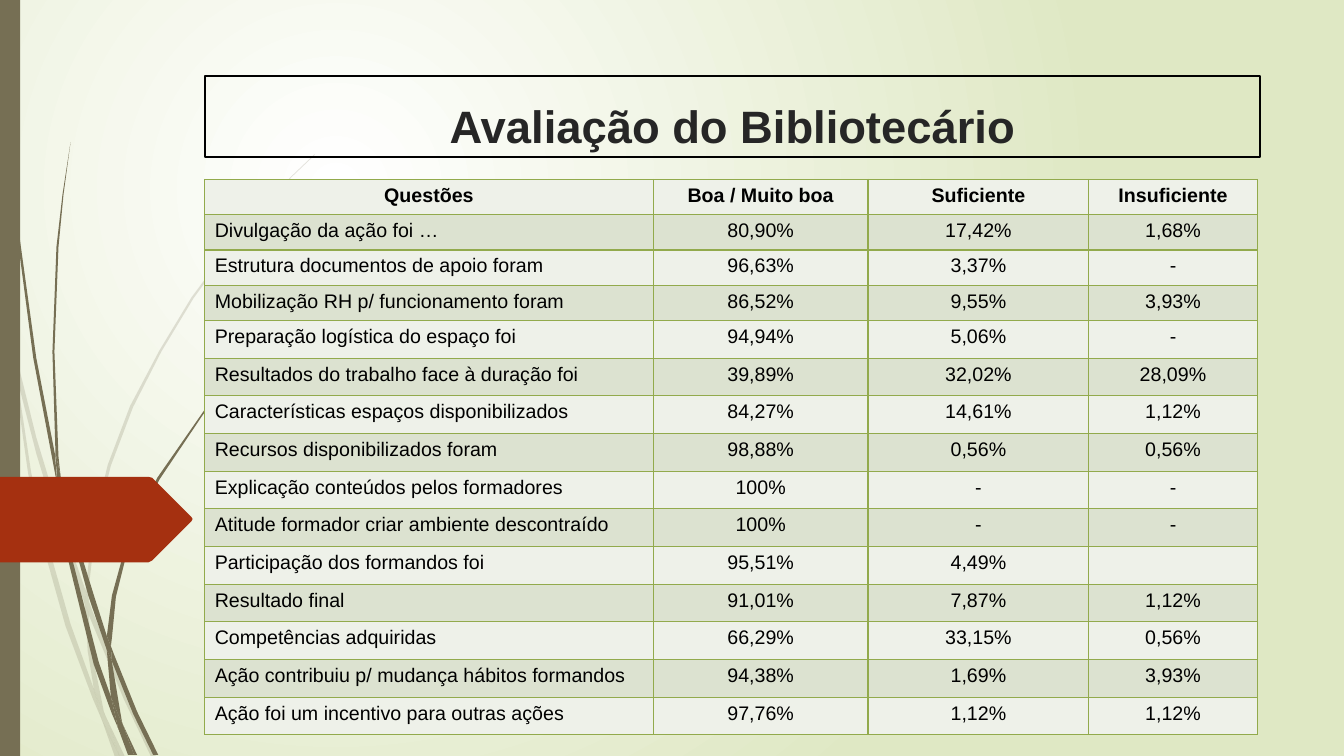
from lxml import etree
from pptx import Presentation
from pptx.dml.color import RGBColor
from pptx.enum import shapes, text
from pptx.oxml.ns import qn
from pptx.util import Inches, Pt

WHITE = RGBColor(0xFF, 0xFF, 0xFF)
BLACK = RGBColor(0x00, 0x00, 0x00)
PALE_GREEN = RGBColor(0xDF, 0xE8, 0xC4)
BROWN = RGBColor(0x76, 0x6F, 0x54)
RUST = RGBColor(0xA5, 0x30, 0x10)
TITLE_GREY = RGBColor(0x26, 0x26, 0x26)
ROW_FILLS = RGBColor(0xEE, 0xF1, 0xE9), RGBColor(0xDC, 0xE2, 0xD0)
BORDER = RGBColor(0x92, 0xAA, 0x4C)
FONT = "Arial"

# Outlines of the pieces of the grass blades
FAINT_GRASS = [
    [(0.11, 3.5), (0.09, 3.22), (0, 2.82), (0, 2.99), (0.1, 3.44)],
    [(0.58, 5.22), (0.84, 5.99), (0.85, 5.86), (0.62, 5.2), (0.36, 4.34), (0.14, 3.45),
     (0.17, 3.76), (0.36, 4.5)],
    [(0.92, 6.07), (0.88, 5.96), (0.88, 6.1), (1.23, 6.94), (1.5, 7.51), (1.55, 7.51),
     (1.27, 6.92)],
    [(1.19, 7.51), (1.24, 7.51), (1.05, 7.11)],
    [(0.93, 6.83), (0.7, 6.19), (0.49, 5.45), (0.31, 4.69), (0.17, 3.76), (0.11, 3.5),
     (0.28, 4.7), (0.44, 5.46), (0.65, 6.21), (0.92, 6.93), (1.01, 7.14), (0.99, 7.07)],
    [(0.84, 5.99), (0.87, 6.46), (0.93, 6.83), (0.96, 6.92), (1.05, 7.11), (1.03, 7.06),
     (0.91, 6.46), (0.88, 6.1), (0.88, 6.08)],
    [(0.88, 5.84), (0.95, 5.22), (1.1, 4.62), (1.32, 4.04), (1.6, 3.49), (1.92, 2.96),
     (2.29, 2.45), (2.68, 1.98), (2.9, 1.75), (3.12, 1.54), (3.12, 1.53), (2.89, 1.75),
     (2.68, 1.97), (2.28, 2.44), (1.9, 2.95), (1.58, 3.48), (1.29, 4.03), (1.07, 4.61),
     (0.92, 5.22), (0.85, 5.84), (0.85, 5.86), (0.88, 5.96)],
    [(1.01, 7.14), (1.14, 7.51), (1.19, 7.51)],
    [(0.88, 6.08), (0.88, 6.1), (0.88, 5.96), (0.85, 5.86), (0.84, 5.99)],
    [(0.96, 6.92), (0.93, 6.83), (0.99, 7.07), (1.01, 7.14), (1.19, 7.51), (1.05, 7.11)],
]
DARK_GRASS = [
    [(0.07, 1.1), (0.17, 2.33), (0.33, 3.55), (0.56, 4.77), (0.57, 4.81), (0.55, 4.57),
     (0.55, 4.53), (0.36, 3.55), (0.19, 2.32), (0.08, 1.09), (0.05, 0.48), (0.04, 0),
     (0.03, 0), (0.04, 0.48)],
    [(0.88, 5.92), (1.06, 6.45), (1.06, 6.33), (1.06, 6.31), (0.93, 5.9), (0.75, 5.32),
     (0.6, 4.72), (0.64, 5.05)],
    [(1.13, 6.49), (1.1, 6.41), (1.11, 6.56), (1.32, 7.08), (1.52, 7.49), (1.57, 7.49),
     (1.36, 7.06)],
    [(1.1, 6.91), (0.98, 6.57), (0.72, 5.56), (0.64, 5.05), (0.57, 4.77), (0.68, 5.57),
     (0.93, 6.59), (1.11, 7.08), (1.17, 7.22), (1.16, 7.17)],
    [(0.6, 4.72), (0.58, 4.53), (0.54, 3.49), (0.58, 2.45), (0.63, 1.93), (0.7, 1.41),
     (0.62, 1.93), (0.56, 2.45), (0.52, 3.49), (0.55, 4.49)],
    [(1.33, 7.49), (1.36, 7.49), (1.22, 7.19)],
    [(0.57, 4.77), (0.64, 5.05), (0.6, 4.72), (0.55, 4.49), (0.55, 4.53)],
    [(1.11, 6.33), (1.15, 5.92), (1.25, 5.52), (1.4, 5.13), (1.58, 4.76), (2.05, 4.06),
     (2.31, 3.74), (2.45, 3.59), (2.61, 3.44), (2.6, 3.44), (2.45, 3.58), (2.31, 3.73),
     (2.04, 4.05), (1.56, 4.74), (1.37, 5.12), (1.22, 5.51), (1.11, 5.91), (1.06, 6.31),
     (1.1, 6.41)],
    [(1.17, 7.22), (1.27, 7.49), (1.31, 7.49)],
    [(1.06, 6.45), (1.1, 6.91), (1.16, 7.06), (1.22, 7.19), (1.21, 7.16), (1.11, 6.56),
     (1.09, 6.51)],
    [(1.06, 6.45), (1.09, 6.51), (1.11, 6.56), (1.1, 6.41), (1.06, 6.31), (1.06, 6.33)],
    [(1.16, 7.06), (1.1, 6.91), (1.16, 7.17), (1.17, 7.22), (1.3, 7.49), (1.33, 7.49),
     (1.22, 7.19)],
]
ARROW_OUTLINE = [(0, 4.73), (1.47, 4.73), (1.51, 4.74), (1.9, 5.13), (1.91, 5.15),
                 (1.9, 5.17), (1.51, 5.56), (1.47, 5.58), (0, 5.58)]

COLUMN_WIDTHS = 4.45, 2.13, 2.19, 1.67
TABLE_HEIGHT = 5.51
SHORT_ROWS, SHORT_HEIGHT = 4, 0.35
RATINGS = [
    ("Questões", "Boa / Muito boa", "Suficiente", "Insuficiente"),
    ("Divulgação da ação foi …", "80,90%", "17,42%", "1,68%"),
    ("Estrutura documentos de apoio foram", "96,63%", "3,37%", "-"),
    ("Mobilização RH p/ funcionamento foram", "86,52%", "9,55%", "3,93%"),
    ("Preparação logística do espaço foi", "94,94%", "5,06%", "-"),
    ("Resultados do trabalho face à duração foi", "39,89%", "32,02%", "28,09%"),
    ("Características espaços disponibilizados", "84,27%", "14,61%", "1,12%"),
    ("Recursos disponibilizados foram", "98,88%", "0,56%", "0,56%"),
    ("Explicação conteúdos pelos formadores", "100%", "-", "-"),
    ("Atitude formador criar ambiente descontraído", "100%", "-", "-"),
    ("Participação dos formandos foi", "95,51%", "4,49%", ""),
    ("Resultado final", "91,01%", "7,87%", "1,12%"),
    ("Competências adquiridas", "66,29%", "33,15%", "0,56%"),
    ("Ação contribuiu p/ mudança hábitos formandos", "94,38%", "1,69%", "3,93%"),
    ("Ação foi um incentivo para outras ações", "97,76%", "1,12%", "1,12%"),
]


def set_background(s):
    fill = s.background.fill
    fill.gradient()
    for stop, position, color in zip(fill.gradient_stops, (0, 1), (WHITE, PALE_GREEN)):
        stop.position = position
        stop.color.rgb = color
    # Turn the linear gradient into a circular one
    grad = next(s.element.iter(qn("a:gradFill")))
    grad.remove(grad.find(qn("a:lin")))
    circle = etree.SubElement(grad, qn("a:path"), path="circle")
    etree.SubElement(circle, qn("a:fillToRect"), l="50000", t="50000", r="100000", b="100000")


def paint(sp, color, opacity=100):
    sp.shadow.inherit = False
    sp.line.fill.background()
    sp.fill.solid()
    sp.fill.fore_color.rgb = color
    if opacity < 100:
        clr = next(sp.element.spPr.iter(qn("a:srgbClr")))
        etree.SubElement(clr, qn("a:alpha"), val=str(opacity * 1000))


def add_outline(s, points, color, opacity=100):
    points = [(Inches(x), Inches(y)) for x, y in points]
    builder = s.shapes.build_freeform(*points[0])
    builder.add_line_segments(points[1:])
    paint(builder.convert_to_shape(), color, opacity)


def format_font(font, size, color, bold):
    font.name = FONT
    font.size = Pt(size)
    font.bold = bold
    font.color.rgb = color


def add_title(s, title):
    sp = s.shapes.title
    s.shapes.element.append(sp.element)  # in front of the decoration
    sp.left, sp.top, sp.width, sp.height = map(Inches, (2.03, 0.75, 10.47, 0.81))
    sp.line.color.rgb = BLACK
    sp.line.width = Pt(1.5)
    tf = sp.text_frame
    tf.text = title
    tf.auto_size = text.MSO_AUTO_SIZE.NONE
    tf.vertical_anchor = text.MSO_ANCHOR.BOTTOM
    p = tf.paragraphs[0]
    p.alignment = text.PP_ALIGN.CENTER
    p.line_spacing = 1.5
    format_font(p.font, 32.4, TITLE_GREY, True)


def set_borders(cell):
    tc_pr = cell._tc.get_or_add_tcPr()
    for i, side in enumerate(("a:lnL", "a:lnR", "a:lnT", "a:lnB")):
        ln = etree.Element(qn(side), w=str(Pt(1)))
        solid = etree.SubElement(ln, qn("a:solidFill"))
        etree.SubElement(solid, qn("a:srgbClr"), val=str(BORDER))
        tc_pr.insert(i, ln)


def add_ratings_table(s):
    table = s.shapes.add_table(
        len(RATINGS), len(COLUMN_WIDTHS), Inches(2.03), Inches(1.78),
        Inches(sum(COLUMN_WIDTHS)), Inches(TABLE_HEIGHT)).table
    for column, width in zip(table.columns, COLUMN_WIDTHS):
        column.width = Inches(width)
    tall_height = (TABLE_HEIGHT - SHORT_ROWS * SHORT_HEIGHT) / (len(RATINGS) - SHORT_ROWS)
    for i, values in enumerate(RATINGS):
        table.rows[i].height = Inches(SHORT_HEIGHT if i < SHORT_ROWS else tall_height)
        for j, value in enumerate(values):
            cell = table.cell(i, j)
            cell.text = value
            cell.margin_bottom = 0
            cell.fill.solid()
            cell.fill.fore_color.rgb = ROW_FILLS[i % 2]
            set_borders(cell)
            p = cell.text_frame.paragraphs[0]
            centred = i == 0 or j > 0
            p.alignment = text.PP_ALIGN.CENTER if centred else text.PP_ALIGN.LEFT
            format_font(p.font, 14, BLACK, i == 0)


def main():
    prs = Presentation()
    prs.slide_width, prs.slide_height = Inches(13.33), Inches(7.5)
    s = prs.slides.add_slide(prs.slide_layouts.get_by_name("Title Only"))
    set_background(s)

    # Decoration on the left
    for grass, opacity in ((FAINT_GRASS, 20), (DARK_GRASS, 100)):
        for piece in grass:
            add_outline(s, piece, BROWN, opacity)
    bar = s.shapes.add_shape(shapes.MSO_SHAPE.RECTANGLE, 0, 0, Inches(0.2), Inches(7.5))
    paint(bar, BROWN)
    add_outline(s, ARROW_OUTLINE, RUST)

    # Content
    add_title(s, "Avaliação do Bibliotecário")
    add_ratings_table(s)
    prs.save("out.pptx")


if __name__ == "__main__":
    main()
